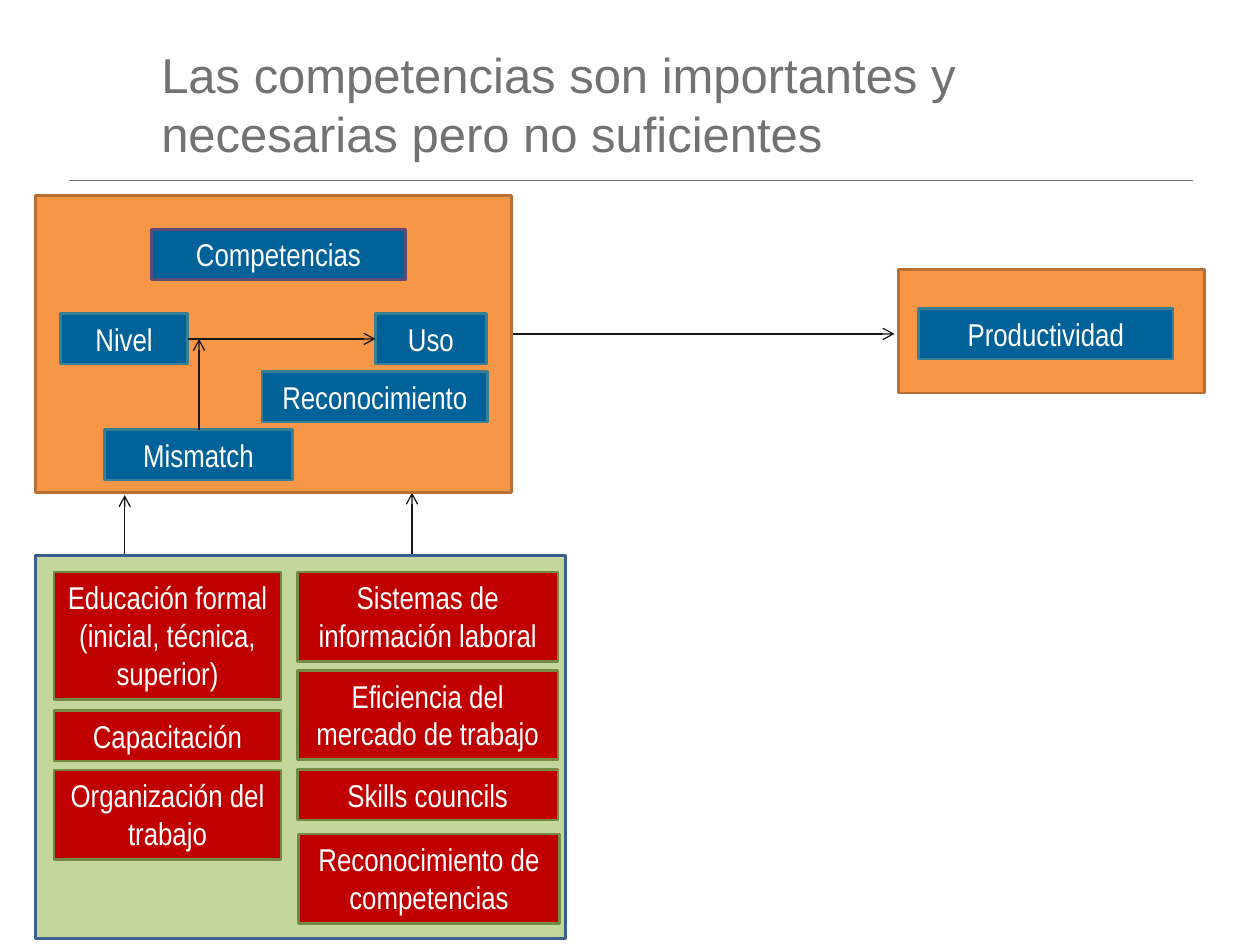
"""Build the slide that relates skills, their sources and productivity."""
import pptx
import pptx.util
import pptx.dml.color
import pptx.enum.shapes
import pptx.enum.text
import pptx.oxml
import pptx.oxml.ns

Inches = pptx.util.Inches
Pt = pptx.util.Pt

GREY, INK, WHITE = "727272", "171717", "FFFFFF"
ORANGE, ORANGE_EDGE = "F79646", "B76F34"
BLUE, BLUE_EDGE, PURPLE_EDGE = "006299", "377F92", "5F4A78"
GREEN, GREEN_EDGE = "C3D69B", "3A5F8C"
RED, RED_EDGE = "C00000", "738A42"
ROW = 0.4
DOUBLE_ROW = 0.71
TRIPLE_ROW = 1.01


def color(value):
    return pptx.dml.color.RGBColor.from_string(value)


def write(frame, text, size, font, ink, align):
    para = frame.paragraphs[0]
    para.alignment = align
    span = para.add_run()
    span.text = text
    span.font.size = Pt(size)
    span.font.name = font
    span.font.color.rgb = color(ink)


class SlideBuilder:
    def __init__(self, slide):
        self.slide = slide

    def title(self, text, left, top, width, height):
        title = self.slide.shapes.title
        title.left, title.top = Inches(left), Inches(top)
        title.width, title.height = Inches(width), Inches(height)
        title.text_frame.vertical_anchor = pptx.enum.text.MSO_ANCHOR.MIDDLE
        write(title.text_frame, text, size=28, font="Arial", ink=GREY,
              align=pptx.enum.text.PP_ALIGN.LEFT)

    def group(self):
        return self.slide.shapes.add_group_shape()

    def panel(self, left, top, width, height, fill, edge, group=None):
        shapes = (group or self.slide).shapes
        box = shapes.add_shape(
            pptx.enum.shapes.MSO_SHAPE.RECTANGLE,
            Inches(left), Inches(top), Inches(width), Inches(height))
        box.shadow.inherit = False
        box.fill.solid()
        box.fill.fore_color.rgb = color(fill)
        box.line.color.rgb = color(edge)
        box.line.width = Pt(1.5)
        return box

    def label(self, text, left, top, width, height=ROW,
              fill=BLUE, edge=BLUE_EDGE, group=None):
        box = self.panel(left, top, width, height, fill, edge, group)
        frame = box.text_frame
        frame.word_wrap = True
        frame.auto_size = pptx.enum.text.MSO_AUTO_SIZE.SHAPE_TO_FIT_TEXT
        frame.vertical_anchor = pptx.enum.text.MSO_ANCHOR.TOP
        write(frame, text, size=18, font="Arial Narrow", ink=WHITE,
              align=pptx.enum.text.PP_ALIGN.CENTER)

    def line(self, start, end, ink=INK, width=0.75, arrow=True):
        line = self.slide.shapes.add_connector(
            pptx.enum.shapes.MSO_CONNECTOR.STRAIGHT,
            *(Inches(length) for length in (*start, *end)))
        line.line.color.rgb = color(ink)
        line.line.width = Pt(width)
        if arrow:
            tail = pptx.oxml.parse_xml(
                f'<a:tailEnd {pptx.oxml.ns.nsdecls("a")} type="arrow"/>')
            line.line._get_or_add_ln().append(tail)
        line._element.spPr.append(pptx.oxml.parse_xml(
            f'<a:effectLst {pptx.oxml.ns.nsdecls("a")}/>'))


def main():
    deck = pptx.Presentation()
    deck.slide_width, deck.slide_height = Inches(10), Inches(7.5)
    page = SlideBuilder(deck.slides.add_slide(deck.slide_layouts[5]))

    page.title("Las competencias son importantes y necesarias pero no suficientes",
               1.18, 0.26, 8.11, 1.12)
    page.line((0.55, 1.43), (9.47, 1.43), ink=GREY, width=0.5, arrow=False)

    outcome = page.group()
    page.panel(7.13, 2.14, 2.43, 0.98, ORANGE, ORANGE_EDGE, outcome)
    page.label("Productividad", 7.29, 2.45, 2.02, group=outcome)

    page.line((0.99, 4.68), (0.99, 3.93))
    page.line((4.06, 2.65), (7.1, 2.65))
    page.line((3.27, 4.66), (3.27, 3.91))

    page.panel(0.28, 1.55, 3.78, 2.36, ORANGE, ORANGE_EDGE)
    page.label("Competencias", 1.2, 1.82, 2.02, edge=PURPLE_EDGE)
    page.label("Nivel", 0.48, 2.49, 1.01)
    page.label("Uso", 2.98, 2.49, 0.88)
    page.label("Mismatch", 0.83, 3.41, 1.49)
    page.line((1.49, 2.69), (2.98, 2.69))
    page.line((1.58, 3.41), (1.58, 2.69))
    page.label("Reconocimiento", 2.08, 2.95, 1.79)

    sources = page.group()
    page.panel(0.28, 4.41, 4.21, 3.04, GREEN, GREEN_EDGE, sources)
    columns = [
        (0.43, 1.8, [
            ("Educación formal (inicial, técnica, superior)", 4.54, TRIPLE_ROW),
            ("Capacitación", 5.64, ROW),
            ("Organización del trabajo", 6.11, DOUBLE_ROW)]),
        (2.36, 2.07, [
            ("Sistemas de información laboral", 4.54, DOUBLE_ROW),
            ("Eficiencia del mercado de trabajo", 5.32, DOUBLE_ROW),
            ("Skills councils", 6.11, ROW)]),
    ]
    for left, width, labels in columns:
        for text, top, height in labels:
            page.label(text, left, top, width, height, RED, RED_EDGE, sources)
    page.label("Reconocimiento de competencias", 2.37, 6.62, 2.07, DOUBLE_ROW,
               RED, RED_EDGE)

    deck.save("out.pptx")


if __name__ == "__main__":
    main()
